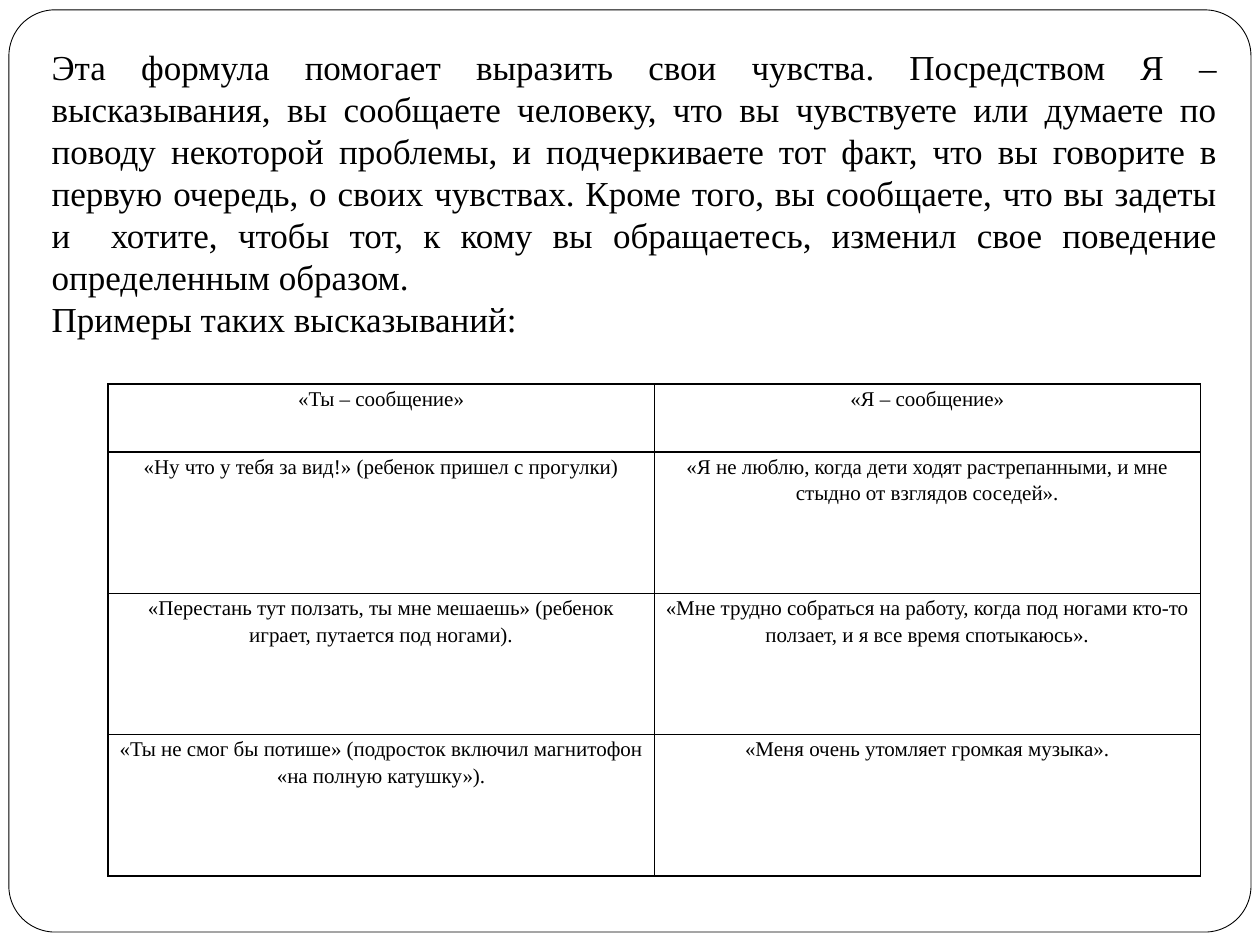
from lxml.etree import SubElement
from pptx import Presentation
from pptx.dml.color import RGBColor
from pptx.enum.shapes import MSO_SHAPE
from pptx.enum.text import PP_ALIGN
from pptx.oxml.ns import qn
from pptx.util import Cm, Pt

BLACK, WHITE = "000000", "FFFFFF"
FONT = "Times New Roman"

INTRODUCTION = [
    "Эта формула помогает выразить свои чувства. Посредством Я – высказывания, "
    "вы сообщаете человеку, что вы чувствуете или думаете по поводу некоторой "
    "проблемы, и подчеркиваете тот факт, что вы говорите в первую очередь, о своих "
    "чувствах. Кроме того, вы сообщаете, что вы задеты и  хотите, чтобы тот, к кому "
    "вы обращаетесь, изменил свое поведение определенным образом.",
    "Примеры таких высказываний:",
]
MESSAGES = [
    ("«Ты – сообщение»", "«Я – сообщение»"),
    ("«Ну что у тебя за вид!» (ребенок пришел с прогулки)",
     "«Я не люблю, когда дети ходят растрепанными, и мне стыдно от взглядов соседей»."),
    ("«Перестань тут ползать, ты мне мешаешь» (ребенок играет, путается под ногами).",
     "«Мне трудно собраться на работу, когда под ногами кто-то ползает, "
     "и я все время спотыкаюсь»."),
    ("«Ты не смог бы потише» (подросток включил магнитофон «на полную катушку»).",
     "«Меня очень утомляет громкая музыка»."),
]
HEADER_HEIGHT, ROW_HEIGHT = Cm(1.37), Cm(2.85)
COLUMN_WIDTH = Cm(11.01)


def color(value):
    return RGBColor.from_string(value)


def write(text_frame, paragraphs, size, align, spacing):
    for index, text in enumerate(paragraphs):
        paragraph = text_frame.paragraphs[0] if index == 0 else text_frame.add_paragraph()
        paragraph.alignment = align
        paragraph.line_spacing = spacing
        run = paragraph.add_run()
        run.text = text
        run.font.name = FONT
        run.font.size = Pt(size)
        run.font.color.rgb = color(BLACK)


def add_borders(cell, line_color, width):
    """Draw all four cell borders; they must precede the cell fill in the XML."""
    properties = cell._tc.get_or_add_tcPr()
    for side in ("a:lnL", "a:lnR", "a:lnT", "a:lnB"):
        line = SubElement(properties, qn(side), w=str(Pt(width)))
        fill = SubElement(line, qn("a:solidFill"))
        SubElement(fill, qn("a:srgbClr"), val=line_color)


def add_frame(slide):
    frame = slide.shapes.add_shape(
        MSO_SHAPE.ROUNDED_RECTANGLE, Cm(0.18), Cm(0.2), Cm(25.04), Cm(18.59))
    frame.adjustments[0] = 0.05
    frame.shadow.inherit = False
    frame.fill.solid()
    frame.fill.fore_color.rgb = color(WHITE)
    frame.line.color.rgb = color(BLACK)
    frame.line.width = Pt(0.5)


def add_introduction(slide):
    box = slide.shapes.add_textbox(Cm(0.79), Cm(0.79), Cm(24), Cm(7.01))
    box.text_frame.word_wrap = True
    write(box.text_frame, INTRODUCTION, size=20, align=PP_ALIGN.JUSTIFY, spacing=Pt(24))


def add_messages(slide):
    row_heights = [HEADER_HEIGHT] + [ROW_HEIGHT] * (len(MESSAGES) - 1)
    columns = len(MESSAGES[0])
    table = slide.shapes.add_table(
        len(MESSAGES), columns, Cm(2.18), Cm(7.74),
        COLUMN_WIDTH * columns, sum(row_heights)).table
    for column in table.columns:
        column.width = COLUMN_WIDTH
    for row, height, texts in zip(table.rows, row_heights, MESSAGES):
        row.height = height
        for cell, text in zip(row.cells, texts):
            cell.margin_left = cell.margin_right = Cm(0.18)
            cell.margin_top = cell.margin_bottom = 0
            add_borders(cell, BLACK, 1)
            cell.fill.solid()
            cell.fill.fore_color.rgb = color(WHITE)
            write(cell.text_frame, [text], size=12, align=PP_ALIGN.CENTER, spacing=1.15)
    table.first_row = table.horz_banding = False


def main():
    presentation = Presentation()
    presentation.slide_width, presentation.slide_height = Cm(25.4), Cm(19.05)
    slide = presentation.slides.add_slide(presentation.slide_layouts[6])
    add_frame(slide)
    add_introduction(slide)
    add_messages(slide)
    presentation.save("out.pptx")


if __name__ == "__main__":
    main()
